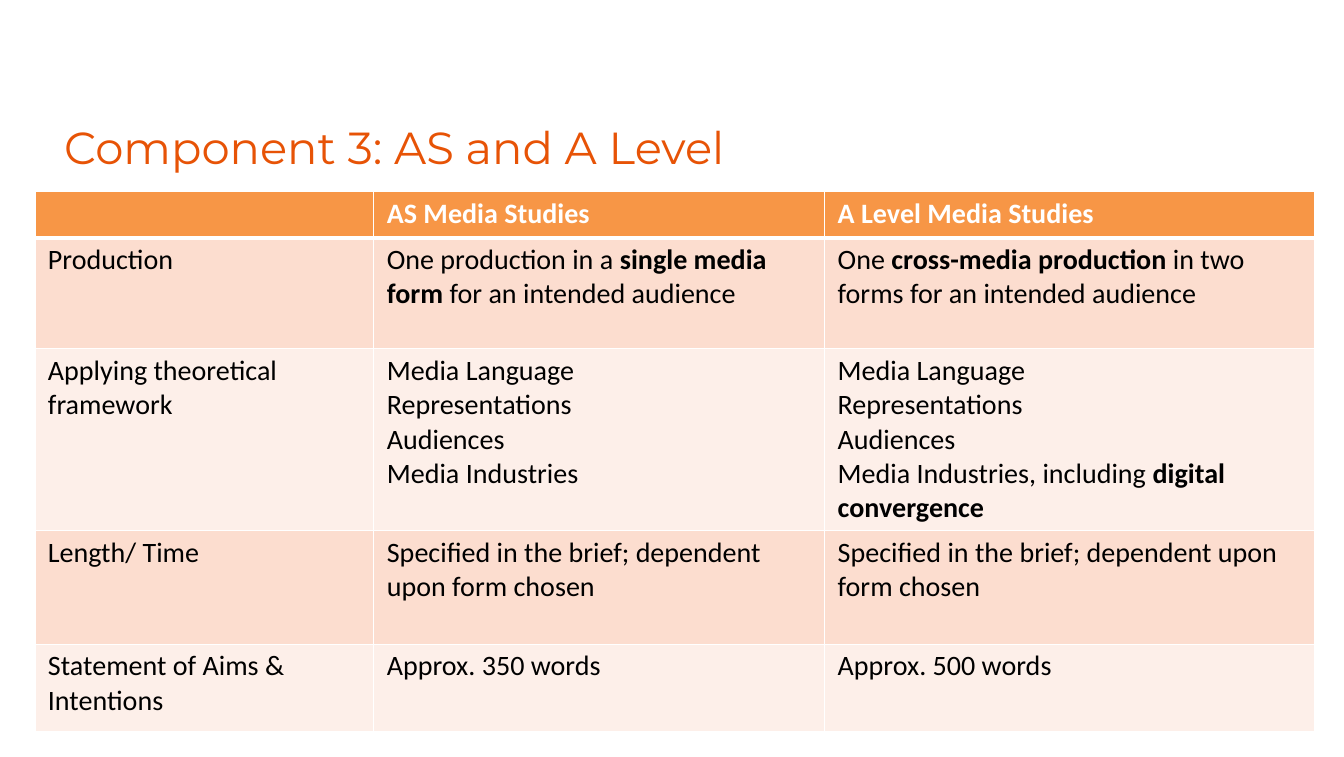
from lxml.etree import SubElement
from pptx import Presentation
from pptx.dml.color import RGBColor as RGB
from pptx.enum.text import MSO_ANCHOR as ANCHOR, MSO_AUTO_SIZE as AUTO, PP_ALIGN as ALIGN
from pptx.oxml.ns import qn
from pptx.util import Inches, Pt

EMU_PER_PX = 914400 / 101
COLORS = {"title": "E75306", "header": "F79646", "odd": "FCDDCF", "even": "FDEFE9",
          "white": "FFFFFF", "black": "000000"}
COL_WIDTHS = [339, 451, 490]
ROW_HEIGHTS = [46, 111, 181, 114, 87]
FRAMEWORK = "Media Language\nRepresentations\nAudiences\nMedia Industries"
LENGTH = "Specified in the brief; dependent upon form chosen"

# Double asterisks switch bold on and off; a line break starts a paragraph
ROWS = [
    ["", "**AS Media Studies**", "**A Level Media Studies**"],
    ["Production",
     "One production in a **single media form **for an intended audience",
     "One **cross-media production **in two forms for an intended audience"],
    ["Applying theoretical framework", FRAMEWORK,
     FRAMEWORK + ", including **digital convergence**"],
    ["Length/ Time", LENGTH, LENGTH],
    ["Statement of Aims & Intentions", "Approx. 350 words", "Approx. 500 words"],
]


def px(n):
    return round(n * EMU_PER_PX)


def rgb(name):
    return RGB.from_string(COLORS[name])


def add_run(p, text, font, size, color, bold=False):
    r = p.add_run()
    r.text = text
    r.font.name, r.font.size, r.font.bold = font, Pt(size), bold
    r.font.color.rgb = rgb(color)


def set_borders(cell, widths):
    tcPr = cell._tc.get_or_add_tcPr()
    for side, width in zip("LRTB", widths):
        ln = SubElement(tcPr, qn(f"a:ln{side}"), w=str(Pt(width)))
        fill = SubElement(ln, qn("a:solidFill"))
        SubElement(fill, qn("a:srgbClr"), val=COLORS["white"])


def fill_cell(cell, text, color):
    cell.margin_left = cell.margin_right = px(13)
    cell.margin_top = cell.margin_bottom = px(5)
    tf = cell.text_frame
    for i, line in enumerate(text.split("\n") if text else []):
        p = tf.add_paragraph() if i else tf.paragraphs[0]
        for j, part in enumerate(line.split("**")):
            if part:
                add_run(p, part, "Calibri", 20, color, bold=j % 2 == 1)


def add_title(s, x, y, w, h):
    sp = s.shapes.title
    sp.left, sp.top, sp.width, sp.height = px(x), px(y), px(w), px(h)
    tf = sp.text_frame
    tf.word_wrap, tf.auto_size = True, AUTO.NONE
    tf.vertical_anchor = ANCHOR.TOP
    p = tf.paragraphs[0]
    p.alignment = ALIGN.LEFT
    add_run(p, "Component 3: AS and A Level", "Montserrat", 32, "title")


def add_comparison(s, x, y):
    table = s.shapes.add_table(len(ROWS), len(COL_WIDTHS), px(x), px(y),
                               px(sum(COL_WIDTHS)), px(sum(ROW_HEIGHTS))).table
    for col, width in zip(table.columns, COL_WIDTHS):
        col.width = px(width)
    for i, (row, height) in enumerate(zip(table.rows, ROW_HEIGHTS)):
        row.height = px(height)
        band = "header" if i == 0 else "odd" if i % 2 else "even"
        # A thicker rule runs under the header row
        widths = [1, 1, 3 if i == 1 else 1, 3 if i == 0 else 1]
        for cell, text in zip(row.cells, ROWS[i]):
            fill_cell(cell, text, "black" if i else "white")
            set_borders(cell, widths)
            cell.fill.solid()
            cell.fill.fore_color.rgb = rgb(band)


def main():
    prs = Presentation()
    prs.slide_width, prs.slide_height = Inches(13.31), Inches(7.5)
    s = prs.slides.add_slide(prs.slide_layouts[5])
    add_title(s, 54, 115, 1237, 69)
    add_comparison(s, 35, 192)
    prs.save("out.pptx")


if __name__ == "__main__":
    main()
